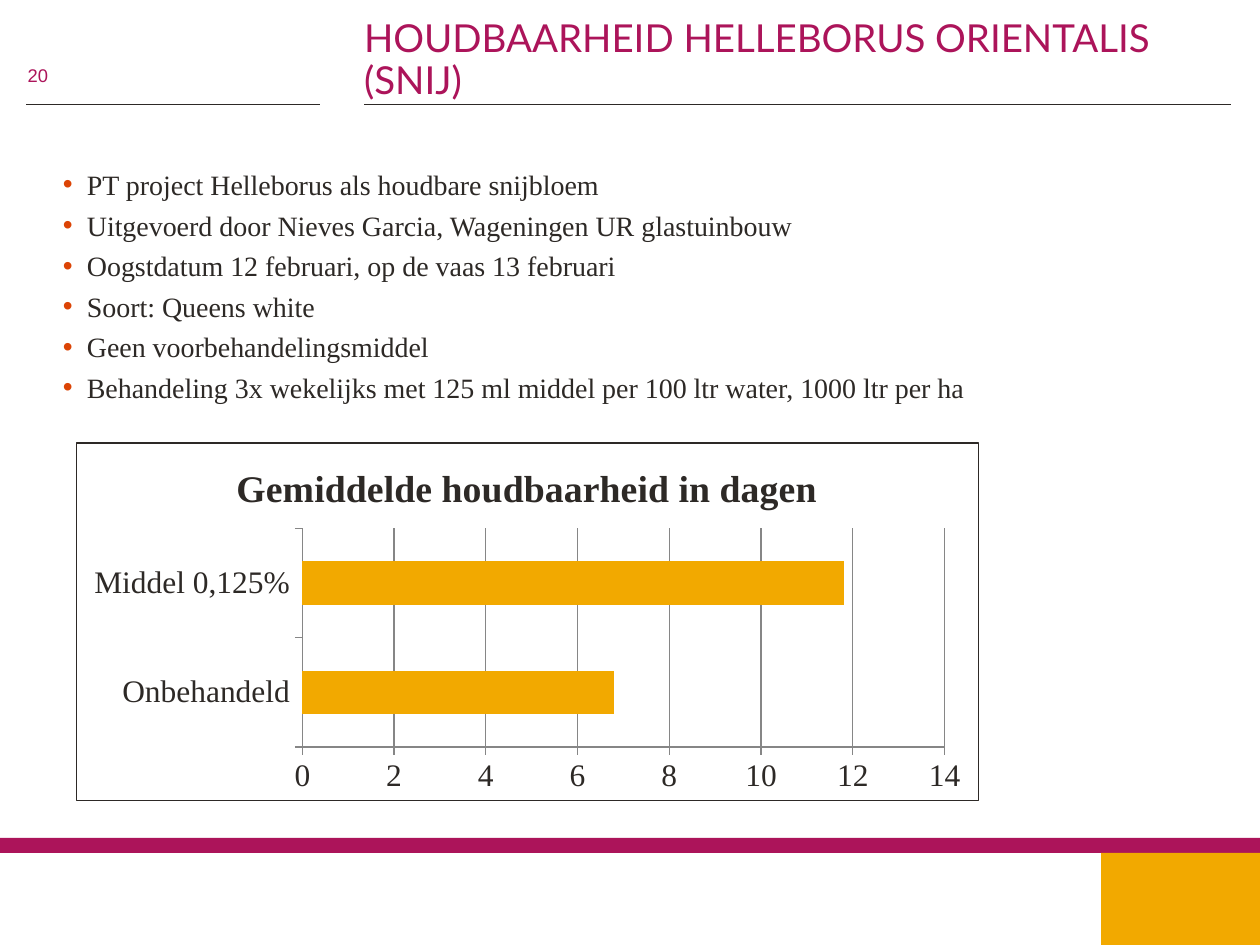
from pptx import Presentation
from pptx.chart.data import CategoryChartData
from pptx.dml.color import RGBColor
from pptx.enum.chart import XL_CHART_TYPE, XL_TICK_MARK
from pptx.enum.shapes import MSO_CONNECTOR, MSO_SHAPE
from pptx.enum.text import MSO_ANCHOR
from pptx.oxml import parse_xml
from pptx.oxml.ns import nsdecls, qn
from pptx.util import Inches, Pt
from lxml import etree

COLORS = {"ink": "2D2926", "magenta": "AC145A", "amber": "F2A900",
          "bullet": "DC4405", "grid": "868686", "white": "FFFFFF"}
SERIF = "Times New Roman"


def text_frame(left, top, width, height, anchor=MSO_ANCHOR.TOP):
    frame = slide.shapes.add_textbox(
        Inches(left), Inches(top), Inches(width), Inches(height)).text_frame
    frame.word_wrap = True
    frame.vertical_anchor = anchor
    frame.margin_left = frame.margin_right = 0
    frame.margin_top = frame.margin_bottom = 0
    return frame


def add_run(paragraph, text, font_name, size, color):
    run = paragraph.add_run()
    run.text = text
    run.font.name = font_name
    run.font.size = Pt(size)
    run.font.color.rgb = RGBColor.from_string(COLORS[color])


prs = Presentation()
prs.slide_width, prs.slide_height = Inches(10), Inches(7.5)
slide = prs.slides.add_slide(prs.slide_layouts[6])

# Header rules
for start, end in [(2.89, 9.77), (0.21, 2.54)]:
    rule = slide.shapes.add_connector(
        MSO_CONNECTOR.STRAIGHT, Inches(start), Inches(0.83), Inches(end), Inches(0.83))
    rule.line.color.rgb = RGBColor.from_string(COLORS["ink"])
    rule.line.width = Pt(0.5)
    etree.SubElement(rule._element.spPr, qn("a:effectLst"))

# Footer band and corner block
for left, top, width, height, color in [(0, 6.65, 10, 0.12, "magenta"),
                                        (8.74, 6.77, 1.26, 0.73, "amber")]:
    block = slide.shapes.add_shape(
        MSO_SHAPE.RECTANGLE, Inches(left), Inches(top), Inches(width), Inches(height))
    block.shadow.inherit = False
    block.fill.solid()
    block.fill.fore_color.rgb = RGBColor.from_string(COLORS[color])
    block.line.fill.background()

# Page number and title
page_number = text_frame(0.22, 0.51, 0.57, 0.18).paragraphs[0]
add_run(page_number, "20", "Arial", 10.5, "magenta")
title = text_frame(2.89, 0.23, 6.88, 0.58, MSO_ANCHOR.BOTTOM).paragraphs[0]
title.line_spacing = Pt(24)
add_run(title, "HOUDBAARHEID HELLEBORUS ORIENTALIS (SNIJ)", "Lato", 22, "magenta")

# Trial details
details = [
    "PT project Helleborus als houdbare snijbloem",
    "Uitgevoerd door Nieves Garcia, Wageningen UR glastuinbouw",
    "Oogstdatum 12 februari, op de vaas 13 februari",
    "Soort: Queens white",
    "Geen voorbehandelingsmiddel",
    "Behandeling 3x wekelijks met 125 ml middel per 100 ltr water, 1000 ltr per ha",
]
body = text_frame(0.5, 1.33, 9, 1.83)
for index, detail in enumerate(details):
    paragraph = body.add_paragraph() if index else body.paragraphs[0]
    properties = paragraph._p.get_or_add_pPr()
    properties.set("marL", str(Inches(0.19)))
    properties.set("indent", str(-Inches(0.19)))
    bullet_color = etree.SubElement(properties, qn("a:buClr"))
    etree.SubElement(bullet_color, qn("a:srgbClr"), val=COLORS["bullet"])
    etree.SubElement(properties, qn("a:buFont"), typeface="Arial")
    etree.SubElement(properties, qn("a:buChar"), char="•")
    if index:
        paragraph.space_before = Pt(4)
    add_run(paragraph, detail, SERIF, 16, "ink")

# Vase life chart
vase_life = CategoryChartData()
vase_life.categories = ["Onbehandeld", "Middel 0,125%"]
vase_life.add_series("Houdbaarheid", [6.8, 11.8])
chart = slide.shapes.add_chart(
    XL_CHART_TYPE.BAR_CLUSTERED, Inches(0.6), Inches(3.51),
    Inches(7.17), Inches(2.85), vase_life).chart
chart.has_legend = False
chart.font.name = SERIF
chart.font.size = Pt(18)
chart.font.color.rgb = RGBColor.from_string(COLORS["ink"])

chart.has_title = True
chart_title = chart.chart_title.text_frame.paragraphs[0]
add_run(chart_title, "Gemiddelde houdbaarheid in dagen", SERIF, 21.6, "ink")
chart_title.runs[0].font.bold = True
chart.chart_title.include_in_layout = False

plot = chart.plots[0]
plot.gap_width = 150
plot.vary_by_categories = False
bars = plot.series[0].format.fill
bars.solid()
bars.fore_color.rgb = RGBColor.from_string(COLORS["amber"])

days = chart.value_axis
days.minimum_scale, days.maximum_scale, days.major_unit = 0, 14, 2
days.has_major_gridlines = True
for axis in (chart.category_axis, days):
    axis.major_tick_mark = XL_TICK_MARK.OUTSIDE
for lined in (chart.category_axis, days, days.major_gridlines):
    lined.format.line.color.rgb = RGBColor.from_string(COLORS["grid"])
    lined.format.line.width = Pt(0.75)

# Chart frame
chart_space = chart._chartSpace
chart_space.find(qn("c:chart")).addnext(parse_xml(
    f'<c:spPr {nsdecls("c", "a")}>'
    f'<a:solidFill><a:srgbClr val="{COLORS["white"]}"/></a:solidFill>'
    f'<a:ln w="{Pt(0.75)}"><a:solidFill><a:srgbClr val="{COLORS["ink"]}"/></a:solidFill></a:ln>'
    '</c:spPr>'))

prs.save("out.pptx")
